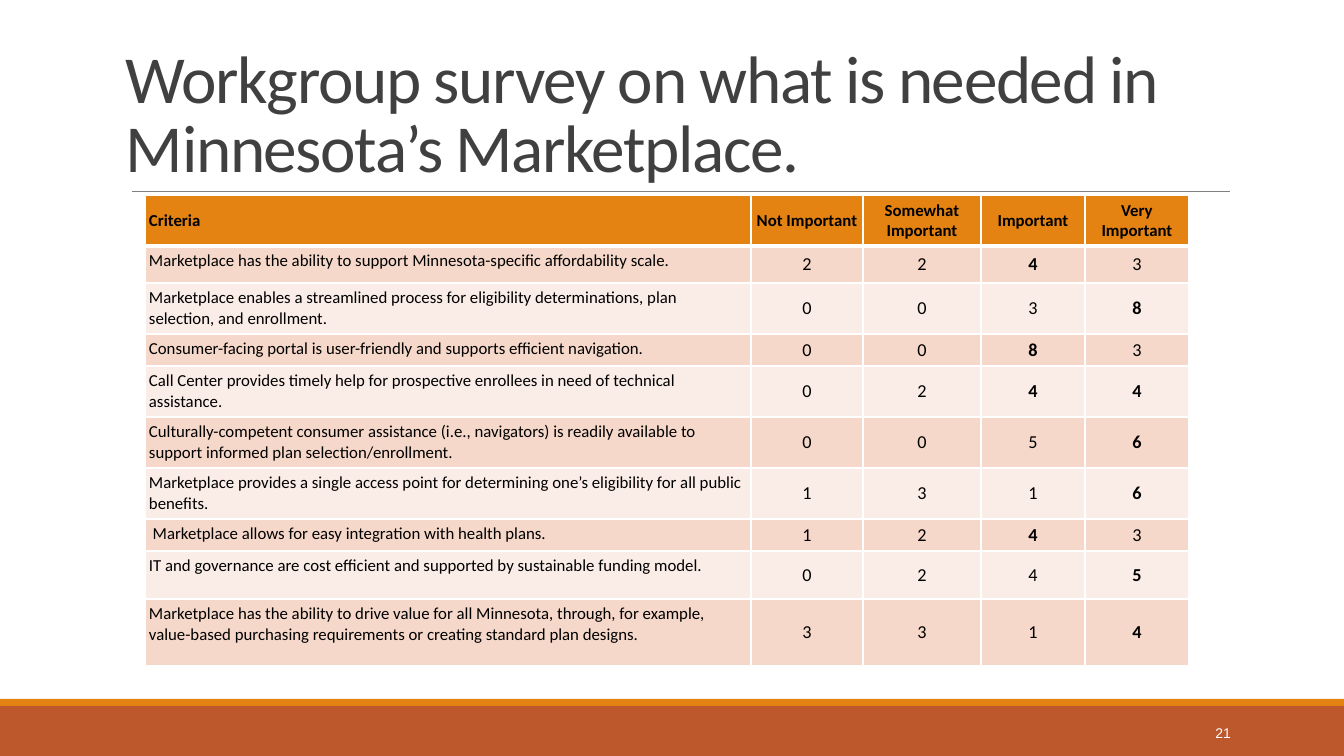
from dataclasses import dataclass

from lxml.etree import SubElement
from pptx import Presentation
from pptx.dml.color import RGBColor
from pptx.enum.shapes import MSO_CONNECTOR, MSO_SHAPE
from pptx.enum.text import MSO_ANCHOR, PP_ALIGN
from pptx.oxml.ns import qn
from pptx.util import Emu, Pt


@dataclass(frozen=True)
class Theme:
    font: str = "Calibri"
    number_font: str = "Arial"
    title_color: str = "404040"
    text_color: str = "000000"
    white: str = "FFFFFF"
    rule_color: str = "808080"
    orange: str = "E48312"
    rust: str = "BD582C"
    bands: tuple = ("F5D8CA", "FAECE6")
    title_size: int = 48
    criteria_size: int = 12
    score_size: int = 13
    page_size: int = 10


THEME = Theme()
SLIDE_WIDTH, SLIDE_HEIGHT = 1344, 756
HEADINGS = ("Criteria", "Not Important", "Somewhat Important", "Important", "Very Important")
COLUMN_WIDTHS = (606, 112, 118, 104, 104)
HEADING_HEIGHT = 51
SURVEY = (
    (37, "Marketplace has the ability to support Minnesota-specific affordability scale.", (2, 2, 4, 3)),
    (51, "Marketplace enables a streamlined process for eligibility determinations, plan selection, and enrollment.", (0, 0, 3, 8)),
    (32, "Consumer-facing portal is user-friendly and supports efficient navigation.", (0, 0, 8, 3)),
    (51, "Call Center provides timely help for prospective enrollees in need of technical assistance.", (0, 2, 4, 4)),
    (51, "Culturally-competent consumer assistance (i.e., navigators) is readily available to support informed plan selection/enrollment.", (0, 0, 5, 6)),
    (51, "Marketplace provides a single access point for determining one’s eligibility for all public benefits.", (1, 3, 1, 6)),
    (32, " Marketplace allows for easy integration with health plans.", (1, 2, 4, 3)),
    (48, "IT and governance are cost efficient and supported by sustainable funding model.", (0, 2, 4, 5)),
    (67, "Marketplace has the ability to drive value for all Minnesota, through, for example, value-based purchasing requirements or creating standard plan designs.", (3, 3, 1, 4)),
)


def px(length):
    return Emu(round(length * 9144000 / 1008))


def color(value):
    return RGBColor.from_string(value)


def set_margins(target, horizontal, vertical):
    target.margin_left = target.margin_right = px(horizontal)
    target.margin_top = target.margin_bottom = px(vertical)


def write(text_frame, text, size, text_color, font=THEME.font, bold=False, align=PP_ALIGN.LEFT):
    text_frame.text = text
    paragraph = text_frame.paragraphs[0]
    paragraph.alignment = align
    run = paragraph.runs[0]
    run.font.name = font
    run.font.size = Pt(size)
    run.font.bold = bold
    run.font.color.rgb = color(text_color)
    return paragraph


def add_text_box(slide, left, top, width, height, anchor, wrap):
    text_frame = slide.shapes.add_textbox(px(left), px(top), px(width), px(height)).text_frame
    text_frame.word_wrap = wrap
    text_frame.vertical_anchor = anchor
    set_margins(text_frame, 5, 5)
    return text_frame


def add_title(slide, left, top, width, height):
    text_frame = add_text_box(slide, left, top, width, height, MSO_ANCHOR.BOTTOM, True)
    paragraph = write(
        text_frame,
        "Workgroup survey on what is needed in Minnesota’s Marketplace.",
        THEME.title_size,
        THEME.title_color,
    )
    paragraph.line_spacing = 0.85
    paragraph.runs[0].font._element.set("spc", "-100")
    bottom = top + height
    rule = slide.shapes.add_connector(
        MSO_CONNECTOR.STRAIGHT, px(left + 11), px(bottom), px(left + width), px(bottom)
    )
    rule.line.color.rgb = color(THEME.rule_color)
    rule.line.width = Pt(0.5)
    SubElement(rule._element.spPr, qn("a:effectLst"))


def add_bar(slide, left, top, width, height, fill):
    bar = slide.shapes.add_shape(MSO_SHAPE.RECTANGLE, px(left), px(top), px(width), px(height))
    bar.shadow.inherit = False
    bar.fill.solid()
    bar.fill.fore_color.rgb = color(fill)
    bar.line.fill.background()


def add_footer(slide, left, top, width, height):
    stripe = 7
    add_bar(slide, left, top + stripe, width, height - stripe, THEME.rust)
    add_bar(slide, left, top, width, stripe, THEME.orange)
    text_frame = add_text_box(
        slide, left + width - 134, top + 21, 26, 25, MSO_ANCHOR.MIDDLE, False
    )
    write(text_frame, "21", THEME.page_size, THEME.white, THEME.number_font, align=PP_ALIGN.RIGHT)


def add_borders(cell, top_width, bottom_width):
    properties = cell._tc.get_or_add_tcPr()
    widths = {"a:lnL": 1, "a:lnR": 1, "a:lnT": top_width, "a:lnB": bottom_width}
    for tag, width in widths.items():
        border = SubElement(properties, qn(tag), w=str(Pt(width)))
        fill = SubElement(border, qn("a:solidFill"))
        SubElement(fill, qn("a:srgbClr"), val=THEME.white)


def style_cell(cell, row, column, fill):
    add_borders(cell, 3 if row == 1 else 1, 3 if row == 0 else 1)
    cell.fill.solid()
    cell.fill.fore_color.rgb = color(fill)
    set_margins(cell, 4, 5)
    is_criterion = row > 0 and column == 0
    cell.vertical_anchor = MSO_ANCHOR.TOP if is_criterion else MSO_ANCHOR.MIDDLE


def add_survey_table(slide, left, top, width, height):
    table = slide.shapes.add_table(
        len(SURVEY) + 1, len(HEADINGS), px(left), px(top), px(width), px(height)
    ).table
    for table_column, column_width in zip(table.columns, COLUMN_WIDTHS):
        table_column.width = px(column_width)
    rows = [(HEADING_HEIGHT, HEADINGS)] + [
        (row_height, (criterion, *scores)) for row_height, criterion, scores in SURVEY
    ]
    for row, (row_height, values) in enumerate(rows):
        table.rows[row].height = px(row_height)
        fill = THEME.bands[(row - 1) % 2] if row else THEME.orange
        for column, value in enumerate(values):
            cell = table.cell(row, column)
            style_cell(cell, row, column, fill)
            is_score = row > 0 and column > 0
            write(
                cell.text_frame,
                str(value),
                THEME.score_size if is_score else THEME.criteria_size,
                THEME.text_color,
                bold=row == 0 or (is_score and value == max(values[1:])),
                align=PP_ALIGN.CENTER if column else PP_ALIGN.LEFT,
            )


def main():
    presentation = Presentation()
    presentation.slide_width = px(SLIDE_WIDTH)
    presentation.slide_height = px(SLIDE_HEIGHT)
    slide = presentation.slides.add_slide(presentation.slide_layouts[6])
    add_footer(slide, 0, 699, SLIDE_WIDTH, SLIDE_HEIGHT - 699)
    add_title(slide, 121, 31, 1109, 160)
    table_height = HEADING_HEIGHT + sum(row_height for row_height, _, _ in SURVEY)
    add_survey_table(slide, 145, 195, sum(COLUMN_WIDTHS), table_height)
    presentation.save("out.pptx")


if __name__ == "__main__":
    main()
